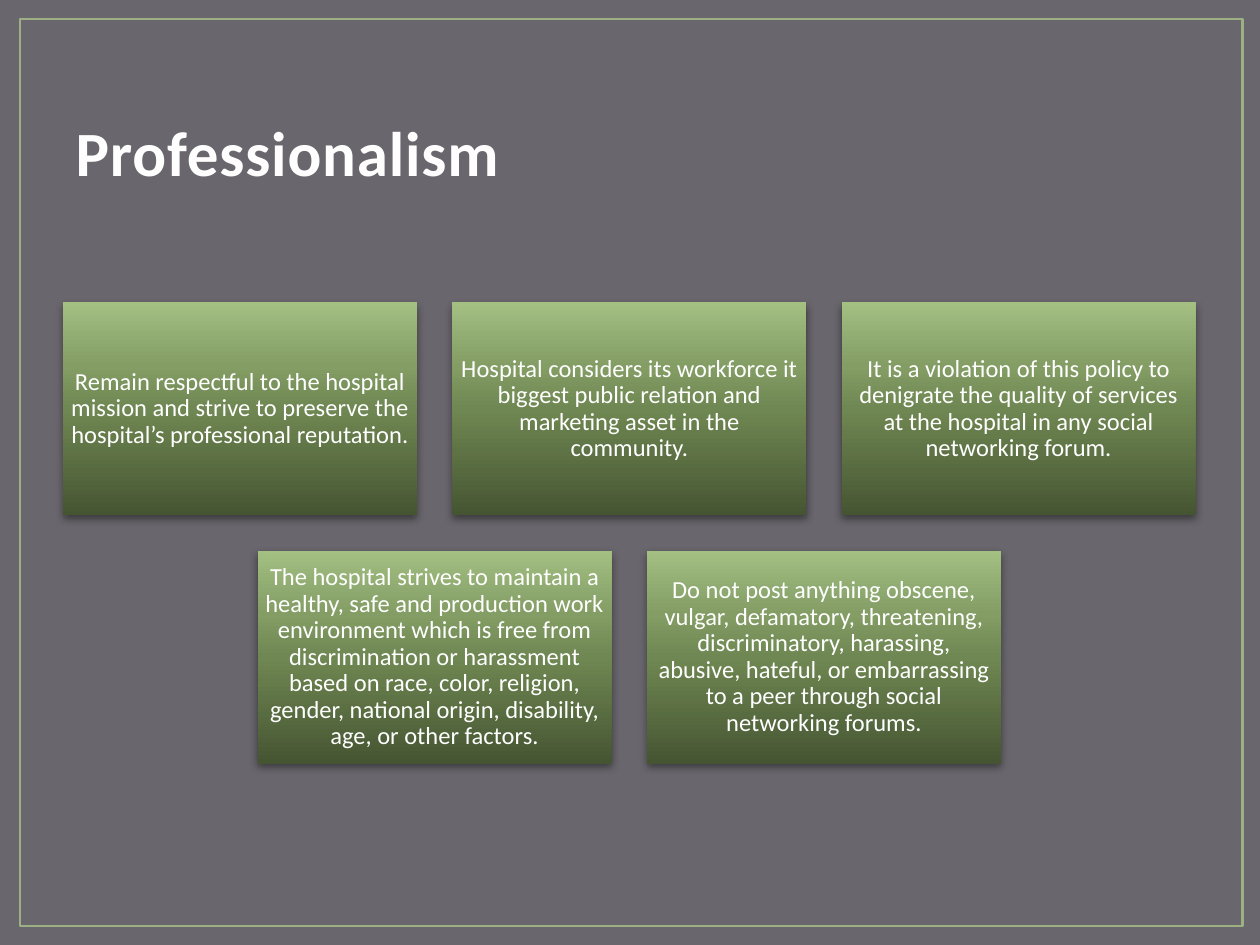
from lxml import etree
from pptx import Presentation
from pptx.dml.color import RGBColor
from pptx.enum.shapes import MSO_SHAPE as Shape
from pptx.enum.text import MSO_ANCHOR as Anchor, PP_ALIGN as Align
from pptx.oxml import parse_xml
from pptx.oxml.ns import nsdecls, qn
from pptx.util import Inches, Pt

COLORS = {
    "background": "69676D",
    "frame": "9CB084",
    "title": "FEFEFE",
    "text": "FFFFFF",
    "shadow": "000000",
}
CARD_STOPS = [(0, "455532"), (50, "6F8752"), (70, "839D65"), (100, "A3BF82")]

# Rows of cards: (first column, texts); the second row is centred by half a column
CARD_ROWS = [
    (0, [
        "Remain respectful to the hospital mission and strive to preserve "
        "the hospital’s professional reputation.",
        "Hospital considers its workforce it biggest public relation and "
        "marketing asset in the community.",
        "It is a violation of this policy to denigrate the quality of services "
        "at the hospital in any social networking forum.",
    ]),
    (0.5, [
        "The hospital strives to maintain a healthy, safe and production work "
        "environment which is free from discrimination or harassment based on "
        "race, color, religion, gender, national origin, disability, age, or "
        "other factors.",
        "Do not post anything obscene, vulgar, defamatory, threatening, "
        "discriminatory, harassing, abusive, hateful, or embarrassing to a peer "
        "through social networking forums.",
    ]),
]


def rgb(name):
    return RGBColor.from_string(COLORS[name])


class SlideBuilder:
    FONT = "Calibri"
    LEFT, TOP = 0.5, 2.4
    CARD_WIDTH, CARD_HEIGHT, GAP = 2.81, 1.69, 0.28

    def __init__(self, slide):
        self.slide = slide

    def background(self):
        fill = self.slide.background.fill
        fill.solid()
        fill.fore_color.rgb = rgb("background")

    def rectangle(self, left, top, width, height):
        shape = self.slide.shapes.add_shape(
            Shape.RECTANGLE, *map(Inches, (left, top, width, height)))
        shape.shadow.inherit = False
        return shape

    def frame(self):
        shape = self.rectangle(0.16, 0.15, 9.7, 7.2)
        shape.fill.background()
        shape.line.color.rgb = rgb("frame")
        shape.line.width = Pt(1.5)

    def add_run(self, paragraph, text, size, color, bold=False):
        run = paragraph.add_run()
        run.text = text
        run.font.name = self.FONT
        run.font.size = Pt(size)
        run.font.bold = bold
        run.font.color.rgb = rgb(color)
        return run

    def title(self, text):
        title = self.slide.shapes.title
        title.left, title.top = Inches(0.5), Inches(0.3)
        title.width, title.height = Inches(9), Inches(1.25)
        title.text_frame.vertical_anchor = Anchor.BOTTOM
        paragraph = title.text_frame.paragraphs[0]
        paragraph.alignment = Align.LEFT
        run = self.add_run(paragraph, text, 36, "title", bold=True)
        run.font._element.set("spc", "50")

    def card_style(self, shape):
        """Vertical gradient, dark at the bottom, with a soft shadow below."""
        stops = "".join(
            f'<a:gs pos="{share * 1000}"><a:srgbClr val="{color}"/></a:gs>'
            for share, color in CARD_STOPS)
        gradient = parse_xml(
            f'<a:gradFill {nsdecls("a")} rotWithShape="1"><a:gsLst>{stops}</a:gsLst>'
            '<a:lin ang="16200000" scaled="0"/></a:gradFill>')
        shape.line.fill.background()
        properties = shape._element.spPr
        properties.find(qn("a:prstGeom")).addnext(gradient)
        shadow = etree.SubElement(
            properties.find(qn("a:effectLst")), qn("a:outerShdw"),
            blurRad=str(Pt(5)), dist=str(Pt(2)), dir="5400000", rotWithShape="0")
        color = etree.SubElement(shadow, qn("a:srgbClr"), val=COLORS["shadow"])
        etree.SubElement(color, qn("a:alpha"), val="43000")

    def card(self, column, row, text):
        shape = self.rectangle(
            self.LEFT + column * (self.CARD_WIDTH + self.GAP),
            self.TOP + row * (self.CARD_HEIGHT + self.GAP),
            self.CARD_WIDTH, self.CARD_HEIGHT)
        self.card_style(shape)
        frame = shape.text_frame
        frame.word_wrap = True
        frame.vertical_anchor = Anchor.MIDDLE
        frame.margin_left = frame.margin_right = Inches(0.06)
        frame.margin_top = frame.margin_bottom = Inches(0.06)
        paragraph = frame.paragraphs[0]
        paragraph.alignment = Align.CENTER
        paragraph.line_spacing = 0.9
        self.add_run(paragraph, text, 14, "text")


def main():
    presentation = Presentation()
    presentation.slide_width, presentation.slide_height = Inches(10), Inches(7.5)
    title_only = presentation.slide_layouts[5]
    builder = SlideBuilder(presentation.slides.add_slide(title_only))

    # Backdrop and heading
    builder.background()
    builder.frame()
    builder.title("Professionalism")

    # Policy cards
    for row, (first_column, texts) in enumerate(CARD_ROWS):
        for offset, text in enumerate(texts):
            builder.card(first_column + offset, row, text)

    presentation.save("out.pptx")


if __name__ == "__main__":
    main()
